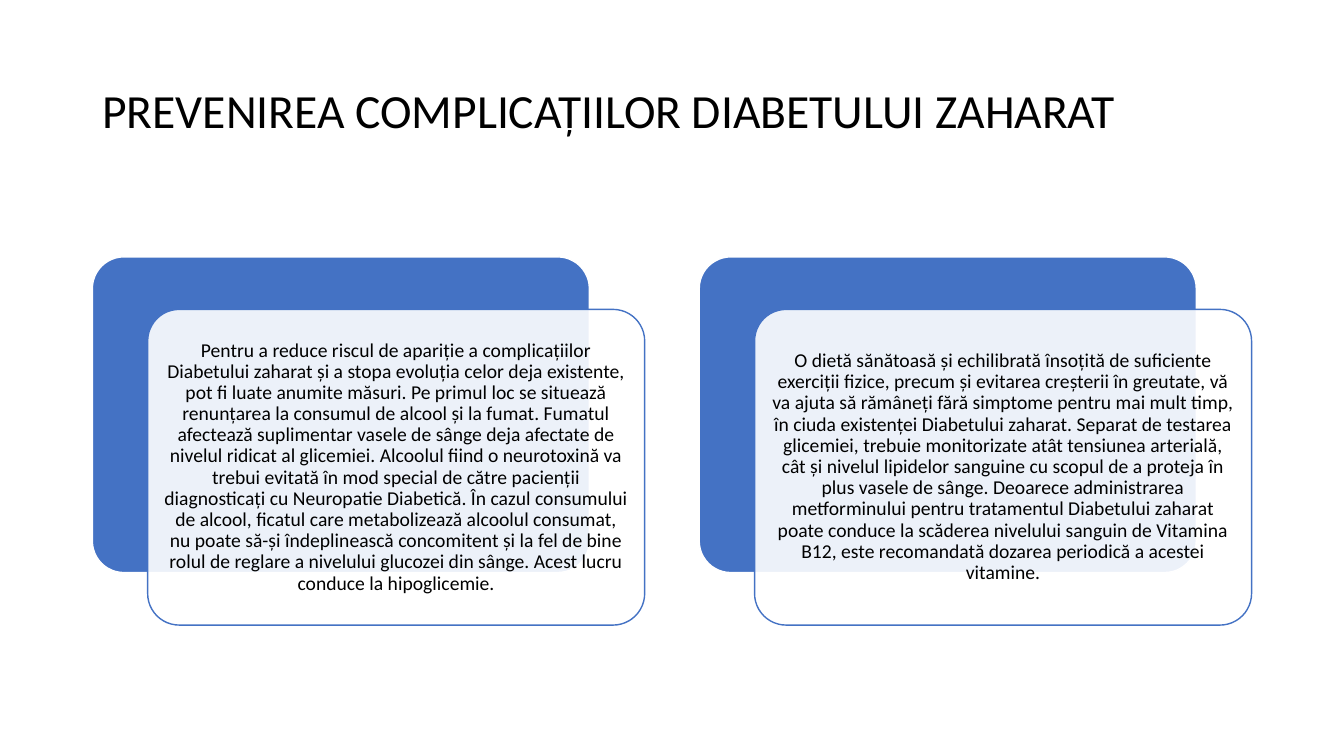
"""Builds a slide on preventing the complications of diabetes, with two text cards."""
from lxml import etree
from pptx import Presentation
from pptx.dml.color import RGBColor
from pptx.enum import shapes, text
from pptx.oxml.ns import qn
from pptx.util import Pt

CARDS = [
    "Pentru a reduce riscul de apariție a complicațiilor Diabetului zaharat și a stopa "
    "evoluția celor deja existente, pot fi luate anumite măsuri. Pe primul loc se situează "
    "renunțarea la consumul de alcool și la fumat. Fumatul afectează suplimentar vasele de "
    "sânge deja afectate de nivelul ridicat al glicemiei. Alcoolul fiind o neurotoxină va "
    "trebui evitată în mod special de către pacienții diagnosticați cu Neuropatie Diabetică. "
    "În cazul consumului de alcool, ficatul care metabolizează alcoolul consumat, nu poate "
    "să-și îndeplinească concomitent și la fel de bine rolul de reglare a nivelului glucozei "
    "din sânge. Acest lucru conduce la hipoglicemie.",
    "O dietă sănătoasă și echilibrată însoțită de suficiente exerciții fizice, precum și "
    "evitarea creșterii în greutate, vă va ajuta să rămâneți fără simptome pentru mai mult "
    "timp, în ciuda existenței Diabetului zaharat. Separat de testarea glicemiei, trebuie "
    "monitorizate atât tensiunea arterială, cât și nivelul lipidelor sanguine cu scopul de a "
    "proteja în plus vasele de sânge. Deoarece administrarea metforminului pentru tratamentul "
    "Diabetului zaharat poate conduce la scăderea nivelului sanguin de Vitamina B12, este "
    "recomandată dozarea periodică a acestei vitamine.",
]
BLUE, WHITE, BLACK = "4472C4", "FFFFFF", "000000"
LEFT, TOP, WIDTH, HEIGHT = 66, 183.5, 355, 225.5
PITCH, SHIFT_X, SHIFT_Y = 433.5, 39.5, 37.5


def write(tf, words, size, align):
    tf.text = words
    tf.word_wrap = True
    tf.auto_size = text.MSO_AUTO_SIZE.NONE
    tf.vertical_anchor = text.MSO_ANCHOR.MIDDLE
    p = tf.paragraphs[0]
    p.alignment = align
    p.line_spacing = 0.9
    r = p.runs[0]
    r.font.name = "Calibri"
    r.font.size = Pt(size)
    r.font.color.rgb = RGBColor.from_string(BLACK)


def add_panel(s, x, y, fill, line):
    sp = s.shapes.add_shape(shapes.MSO_SHAPE.ROUNDED_RECTANGLE,
                            Pt(x), Pt(y), Pt(WIDTH), Pt(HEIGHT))
    sp.adjustments[0] = 0.1
    sp.shadow.inherit = False
    sp.fill.solid()
    sp.fill.fore_color.rgb = RGBColor.from_string(fill)
    sp.line.color.rgb = RGBColor.from_string(line)
    sp.line.width = Pt(1)
    return sp


prs = Presentation()
prs.slide_width, prs.slide_height = Pt(960), Pt(540)
s = prs.slides.add_slide(prs.slide_layouts[5])

title = s.shapes.title
title.left, title.top, title.width, title.height = Pt(66), Pt(28.8), Pt(828), Pt(104.4)
write(title.text_frame, "PREVENIREA COMPLICAȚIILOR DIABETULUI ZAHARAT", 34, text.PP_ALIGN.LEFT)

for i, words in enumerate(CARDS):
    x = LEFT + i * PITCH
    add_panel(s, x, TOP, BLUE, WHITE)
    card = add_panel(s, x + SHIFT_X, TOP + SHIFT_Y, WHITE, BLUE)
    color = card.fill._xPr.find(qn("a:solidFill"))[0]
    etree.SubElement(color, qn("a:alpha")).set("val", "90000")
    tf = card.text_frame
    tf.margin_left = tf.margin_right = tf.margin_top = tf.margin_bottom = Pt(4.2)
    write(tf, words, 14, text.PP_ALIGN.CENTER)

prs.save("out.pptx")
